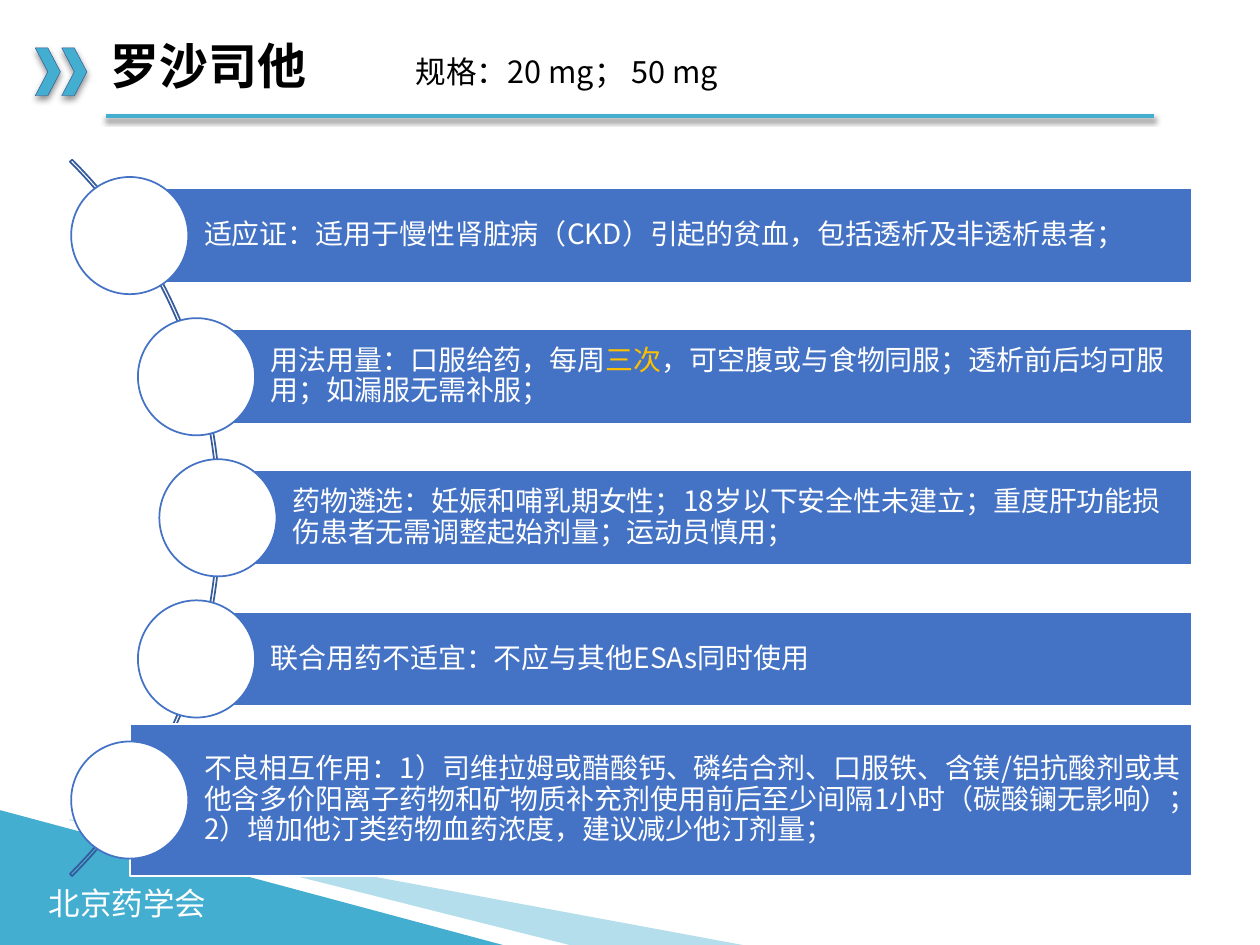
import pptx
import pptx.dml.color
import pptx.enum.shapes
import pptx.enum.text
import pptx.oxml
import pptx.oxml.ns
import pptx.util
from lxml import etree

Inches = pptx.util.Inches
Pt = pptx.util.Pt
RGBColor = pptx.dml.color.RGBColor
MSO_SHAPE = pptx.enum.shapes.MSO_SHAPE
MSO_ANCHOR = pptx.enum.text.MSO_ANCHOR
qn = pptx.oxml.ns.qn

FONT = "Noto Sans CJK SC"
TEAL = RGBColor(0x44, 0xAE, 0xD0)
CHEVRON_EDGE = RGBColor(0x32, 0x54, 0x91)
ARC_EDGE = RGBColor(0x36, 0x5B, 0x9D)
BLUE = RGBColor(0x44, 0x72, 0xC4)
GOLD = RGBColor(0xFF, 0xC0, 0x00)
WHITE = RGBColor(0xFF, 0xFF, 0xFF)
BLACK = RGBColor(0, 0, 0)

CENTER_Y, PITCH, RIGHT, CIRCLE = 4.11, 1.12, 9.46, 0.93
ROWS = [
    (1.03, 0.75, [("适应证：适用于慢性肾脏病（CKD）引起的贫血，包括透析及非透析患者；", WHITE)]),
    (1.56, 0.75, [("用法用量：口服给药，每周", WHITE), ("三次", GOLD),
                  ("，可空腹或与食物同服；透析前后均可服用；如漏服无需补服；", WHITE)]),
    (1.73, 0.75, [("药物遴选：妊娠和哺乳期女性；18岁以下安全性未建立；"
                   "重度肝功能损伤患者无需调整起始剂量；运动员慎用；", WHITE)]),
    (1.56, 0.75, [("联合用药不适宜：不应与其他ESAs同时使用", WHITE)]),
    (1.03, 1.21, [("不良相互作用：1）司维拉姆或醋酸钙、磷结合剂、口服铁、含镁/铝抗酸剂或"
                   "其他含多价阳离子药物和矿物质补充剂使用前后至少间隔1小时（碳酸镧无影响）；"
                   "2）增加他汀类药物血药浓度，建议减少他汀剂量；", WHITE)]),
]


def write(tf, runs, size, bold=False, spacing=1.0, anchor=MSO_ANCHOR.TOP,
          insets=(0.1, 0.05, 0.1, 0.05), wrap=True):
    tf.auto_size = pptx.enum.text.MSO_AUTO_SIZE.NONE
    tf.word_wrap = wrap
    tf.vertical_anchor = anchor
    tf.margin_left, tf.margin_top, tf.margin_right, tf.margin_bottom = map(Inches, insets)
    p = tf.paragraphs[0]
    p.alignment = pptx.enum.text.PP_ALIGN.LEFT
    p.line_spacing = spacing
    for text, color in runs:
        r = p.add_run()
        r.text = text
        r.font.size = Pt(size)
        r.font.bold = bold
        r.font.name = FONT
        r.font.color.rgb = color
        ea = etree.SubElement(r.font._element, qn("a:ea"))
        ea.set("typeface", FONT)


def add_text(s, box, runs, size, **fmt):
    sp = s.shapes.add_textbox(*map(Inches, box))
    write(sp.text_frame, runs, size, **fmt)


def paint(sp, fill=None, line=None, width=1):
    sp.shadow.inherit = False
    if fill is None:
        sp.fill.background()
    else:
        sp.fill.solid()
        sp.fill.fore_color.rgb = fill
    if line is None:
        sp.line.fill.background()
    else:
        sp.line.color.rgb = line
        sp.line.width = Pt(width)


def add_shape(s, kind, box, fill=None, line=None, width=1, adj=()):
    sp = s.shapes.add_shape(kind, *map(Inches, box))
    paint(sp, fill, line, width)
    for i, value in enumerate(adj):
        sp.adjustments[i] = value
    return sp


def add_shadow(sp, color, alpha, blur, dist):
    spPr = sp._element.spPr
    for old in spPr.findall(qn("a:effectLst")):
        spPr.remove(old)
    spPr.append(pptx.oxml.parse_xml(
        '<a:effectLst xmlns:a="http://schemas.openxmlformats.org/drawingml/2006/main">'
        f'<a:outerShdw blurRad="{Pt(blur)}" dist="{Pt(dist)}" dir="5400000" rotWithShape="0">'
        f'<a:srgbClr val="{color}"><a:alpha val="{alpha * 1000}"/></a:srgbClr>'
        '</a:outerShdw></a:effectLst>'))


def add_footer(s):
    add_shape(s, MSO_SHAPE.ISOSCELES_TRIANGLE, (0, 6.43, 3.99, 1.07), TEAL, adj=[0])
    add_text(s, (0.29, 6.97, 1.46, 0.4), [("北京药学会", WHITE)], 18, wrap=False)
    fb = s.shapes.build_freeform(Inches(0.55), Inches(6.51), scale=1.0)
    fb.add_line_segments([(Inches(x), Inches(y))
                          for x, y in ((5.95, 7.51), (4.56, 7.51), (0.55, 6.5))])
    sp = fb.convert_to_shape()
    paint(sp, TEAL)
    color = sp._element.spPr.find(qn("a:solidFill"))[0]
    etree.SubElement(color, qn("a:alpha")).set("val", "40000")


def add_header(s):
    rule = s.shapes.add_connector(pptx.enum.shapes.MSO_CONNECTOR.STRAIGHT,
                                  Inches(9.16), Inches(0.92), Inches(0.84), Inches(0.92))
    rule.line.color.rgb = TEAL
    rule.line.width = Pt(2.25)
    add_shadow(rule, "808080", 100, 3, 2)
    for x in (0.49, 0.28):
        sp = add_shape(s, MSO_SHAPE.CHEVRON, (x, 0.38, 0.2, 0.38),
                       TEAL, CHEVRON_EDGE, 0.25, [0.5])
        add_shadow(sp, "000000", 46, 4, 2)
    title = s.shapes.title
    title.left, title.top, title.width, title.height = map(Inches, (0.78, 0.22, 7.64, 0.65))
    write(title.text_frame, [("罗沙司他", BLACK)], 28, bold=True, spacing=0.9,
          anchor=MSO_ANCHOR.MIDDLE)
    add_text(s, (3.2, 0.45, 3.61, 0.31), [("规格：20 mg； 50 mg", BLACK)], 17.5, spacing=0.7)


def add_row(s, center_y, x, height, runs):
    bar = add_shape(s, MSO_SHAPE.RECTANGLE,
                    (x, center_y - height / 2, RIGHT - x, height), BLUE, WHITE)
    write(bar.text_frame, runs, 16, spacing=0.9, anchor=MSO_ANCHOR.MIDDLE,
          insets=(0.59, 0.04, 0.04, 0.04))
    add_shape(s, MSO_SHAPE.OVAL,
              (x - CIRCLE / 2, center_y - CIRCLE / 2, CIRCLE, CIRCLE), WHITE, BLUE)


def main():
    prs = pptx.Presentation()
    prs.slide_width, prs.slide_height = Inches(10), Inches(7.5)
    s = prs.slides.add_slide(prs.slide_layouts[5])
    add_footer(s)
    add_header(s)
    add_shape(s, MSO_SHAPE.BLOCK_ARC, (-6.29, 0.09, 8.04, 8.04),
              line=ARC_EDGE, adj=[189, 27, 0.003])
    for i, (x, height, runs) in enumerate(ROWS):
        add_row(s, CENTER_Y + (i - 2) * PITCH, x, height, runs)
    prs.save("out.pptx")


if __name__ == "__main__":
    main()
